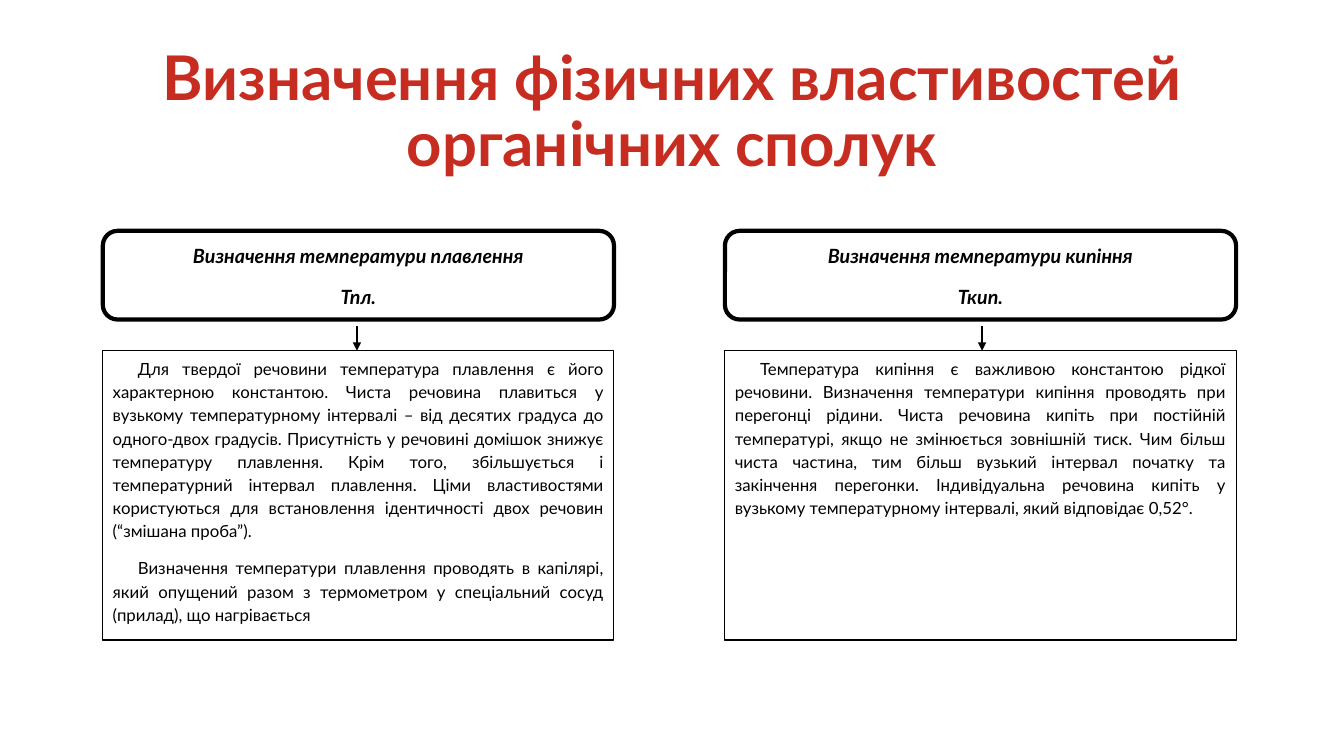
from pptx import Presentation
from pptx.dml.color import RGBColor
from pptx.enum.shapes import MSO_CONNECTOR, MSO_SHAPE
from pptx.enum.text import MSO_ANCHOR, PP_ALIGN
from pptx.oxml.ns import qn
from pptx.util import Inches, Pt
from lxml.etree import SubElement

COLORS = {"title": "C72C21", "ink": "000000", "paper": "FFFFFF"}
TITLE = {"size": Pt(44), "bold": True, "name": "Lato"}
HEADING = {"size": Pt(14), "bold": True, "italic": True, "name": "Lato"}
BODY = {"size": Pt(12), "name": "Lato"}

METHODS = [
    (1.02, 3.54,
     ["Визначення температури плавлення", "Тпл."],
     ["Для твердої речовини температура плавлення є його характерною константою. "
      "Чиста речовина плавиться у вузькому температурному інтервалі – від десятих "
      "градуса до одного-двох градусів. Присутність у речовині домішок знижує "
      "температуру плавлення. Крім того, збільшується і температурний інтервал "
      "плавлення. Ціми властивостями користуються для встановлення ідентичності "
      "двох речовин (“змішана проба”).",
      "Визначення температури плавлення проводять в капілярі, який опущений разом "
      "з термометром у спеціальний сосуд (прилад), що нагрівається"]),
    (7.19, 9.74,
     ["Визначення температури кипіння", "Ткип."],
     ["Температура кипіння є важливою константою рідкої речовини. Визначення "
      "температури кипіння проводять при перегонці рідини. Чиста речовина кипіть "
      "при постійній температурі, якщо не змінюється зовнішній тиск. Чим більш "
      "чиста частина, тим більш вузький інтервал початку та закінчення перегонки. "
      "Індивідуальна речовина кипіть у вузькому температурному інтервалі, який "
      "відповідає 0,52°."]),
]


def write(frame, texts, font_format, color, align, line_spacing, space_after=0, indent=0):
    frame.word_wrap = True
    for index, text in enumerate(texts):
        paragraph = frame.add_paragraph() if index else frame.paragraphs[0]
        paragraph.alignment = align
        paragraph.line_spacing = line_spacing
        paragraph.space_after = Pt(space_after)
        if indent:
            properties = paragraph._p.get_or_add_pPr()
            properties.set("marL", "0")
            properties.set("indent", str(Inches(indent)))
        run = paragraph.add_run()
        run.text = text
        for attribute, value in font_format.items():
            setattr(run.font, attribute, value)
        run.font.color.rgb = RGBColor.from_string(COLORS[color])


def add_panel(preset, left, top, height, line_width):
    panel = slide.shapes.add_shape(
        preset, Inches(left), Inches(top), Inches(5.07), Inches(height))
    panel.shadow.inherit = False
    panel.fill.solid()
    panel.fill.fore_color.rgb = RGBColor.from_string(COLORS["paper"])
    panel.line.color.rgb = RGBColor.from_string(COLORS["ink"])
    panel.line.width = Pt(line_width)
    panel.text_frame.vertical_anchor = MSO_ANCHOR.TOP
    return panel


presentation = Presentation()
presentation.slide_width = Inches(13.33)
presentation.slide_height = Inches(7.5)
slide = presentation.slides.add_slide(presentation.slide_layouts[6])

title = slide.shapes.add_textbox(Inches(0.92), Inches(0.4), Inches(11.5), Inches(1.45))
title.text_frame.vertical_anchor = MSO_ANCHOR.MIDDLE
write(title.text_frame, ["Визначення фізичних властивостей органічних сполук"],
      TITLE, "title", PP_ALIGN.CENTER, 0.9)

for left, arrow_x, heading_lines, description in METHODS:
    heading = add_panel(MSO_SHAPE.ROUNDED_RECTANGLE, left, 2.29, 0.88, 3)
    write(heading.text_frame, heading_lines, HEADING, "ink", PP_ALIGN.CENTER, 1.15, 10)

    explanation = add_panel(MSO_SHAPE.RECTANGLE, left, 3.48, 2.87, 0.75)
    write(explanation.text_frame, description, BODY, "ink", PP_ALIGN.JUSTIFY, 1.15, 10, 0.25)

    arrow = slide.shapes.add_connector(
        MSO_CONNECTOR.STRAIGHT, Inches(arrow_x), Inches(3.23), Inches(arrow_x), Inches(3.48))
    arrow.line.color.rgb = RGBColor.from_string(COLORS["ink"])
    arrow.line.width = Pt(1.5)
    SubElement(arrow.line._get_or_add_ln(), qn("a:tailEnd"), type="triangle")
    SubElement(arrow._element.spPr, qn("a:effectLst"))

presentation.save("out.pptx")
